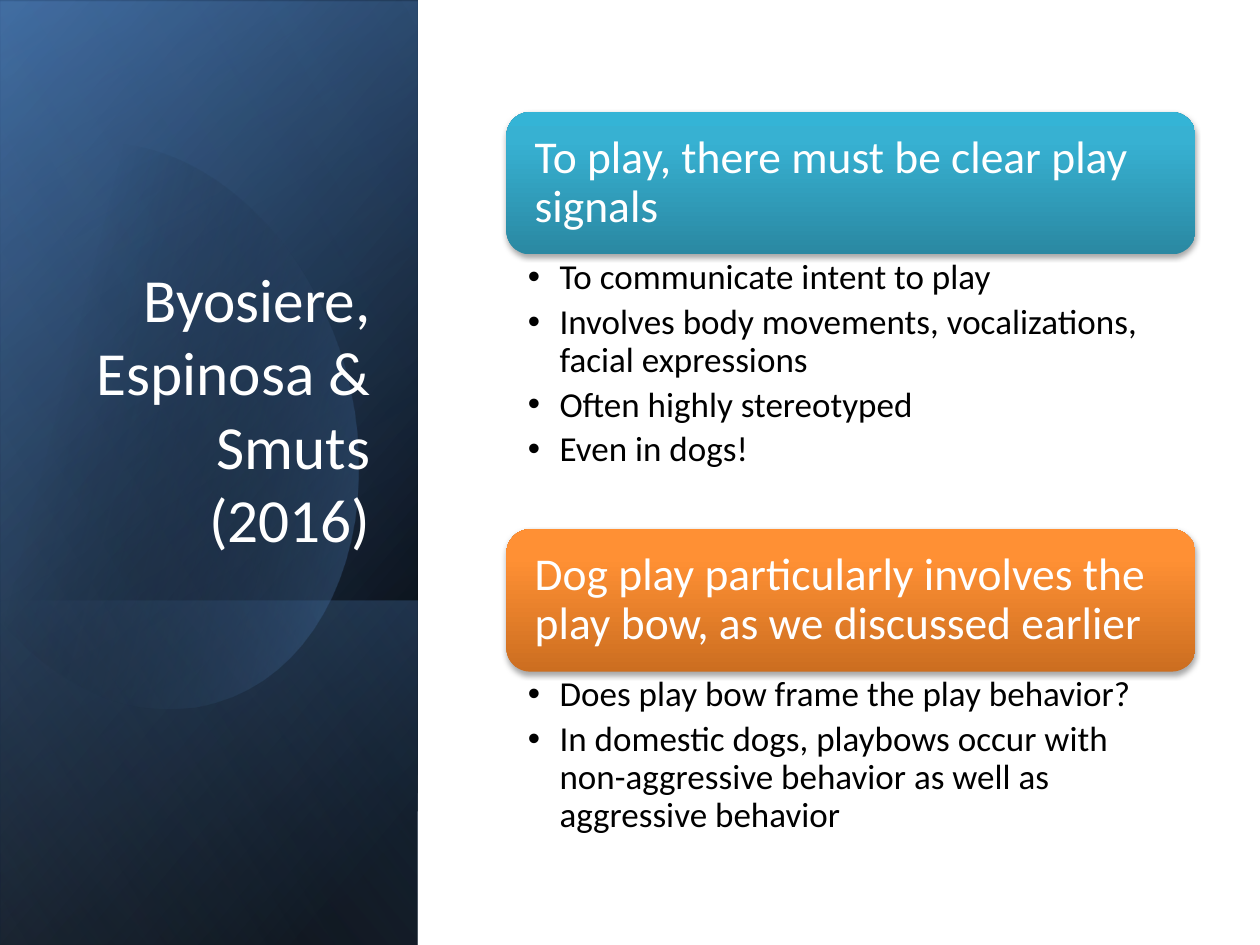
import pptx
import pptx.util
import pptx.dml.color
import pptx.enum.shapes
import pptx.enum.text
import pptx.oxml
import pptx.oxml.ns

Cm = pptx.util.Cm
Pt = pptx.util.Pt
RGBColor = pptx.dml.color.RGBColor
Anchor = pptx.enum.text.MSO_ANCHOR
Align = pptx.enum.text.PP_ALIGN
Preset = pptx.enum.shapes.MSO_SHAPE
qn = pptx.oxml.ns.qn

BLACK = RGBColor(0x00, 0x00, 0x00)
WHITE = RGBColor(0xFF, 0xFF, 0xFF)
NAVY = RGBColor(0x37, 0x60, 0x92)
BLUE = RGBColor(0x4F, 0x81, 0xBD)
PALE = RGBColor(0x95, 0xB3, 0xD7)
TEAL = [(0, RGBColor(0x2A, 0x88, 0xA2), 100),
        (80, RGBColor(0x37, 0xB1, 0xD2), 100),
        (100, RGBColor(0x34, 0xB4, 0xD6), 100)]
ORANGE = [(0, RGBColor(0xCC, 0x6E, 0x20), 100),
          (80, RGBColor(0xFF, 0x90, 0x34), 100),
          (100, RGBColor(0xFF, 0x91, 0x36), 100)]
FONT = "Calibri"

# Side panel layers in cm: left, top, width, stops (place, colour, opacity), angle
BASE = (-5.31, 5.31, 19.05, [(8, BLACK, 100), (100, NAVY, 100)], 50)
SHADE = (-5.31, 5.36, 19.05, [(0, BLACK, 0), (99, BLUE, 46)], 30)
FOOT = (0.74, 11.38, 6.96, [(2, BLUE, 29), (100, BLACK, 30)], 130)
GLOSS = (-5.31, 5.31, 19.05, [(0, BLACK, 0), (99, PALE, 11)], 120)
PANEL = 8.41

# Round glow in cm: one point ends a line, three end a curve
START = (2.44, 2.90)
GLOW = [
    [(4.34, 3.10), (6.20, 4.88), (6.93, 7.37)],
    [(7.80, 10.46), (6.65, 13.49), (4.34, 14.15)],
    [(2.90, 14.58), (1.35, 13.97), (0.18, 12.70)],
    [(-0.08, 12.40)], [(-0.64, 4.22)], [(-0.38, 3.91)],
    [(0.05, 3.48), (0.56, 3.18), (1.14, 3.00)],
    [(1.57, 2.87), (2.01, 2.84), START],
]

# Text column in cm
LEFT, WIDTH, BAR = 10.21, 13.89, 2.87
GROUPS = [
    (2.26, 5.54, TEAL, "To play, there must be clear play signals",
     ["To communicate intent to play",
      "Involves body movements, vocalizations, facial expressions",
      "Often highly stereotyped",
      "Even in dogs!"]),
    (10.67, 3.51, ORANGE,
     "Dog play particularly involves the play bow, as we discussed earlier",
     ["Does play bow frame the play behavior?",
      "In domestic dogs, playbows occur with non-aggressive behavior "
      "as well as aggressive behavior"]),
]


def blend(shape, stops, angle):
    """Fill a shape with a linear gradient and drop its line and shadow."""
    marks = "".join(
        f'<a:gs pos="{place * 1000}"><a:srgbClr val="{tint}">'
        f'<a:alpha val="{alpha * 1000}"/></a:srgbClr></a:gs>'
        for place, tint, alpha in stops)
    grad = pptx.oxml.parse_xml(
        f'<a:gradFill {pptx.oxml.ns.nsdecls("a")} rotWithShape="1">'
        f'<a:gsLst>{marks}</a:gsLst>'
        f'<a:lin ang="{angle * 60000}" scaled="0"/></a:gradFill>')
    shape.fill.solid()
    props = shape.element.spPr
    props.replace(props.find(qn("a:solidFill")), grad)
    shape.line.fill.background()
    shape.shadow.inherit = False


def add_layer(slide, left, top, width, stops, angle):
    """Add a mirrored panel turned on its side."""
    shape = slide.shapes.add_shape(
        Preset.RECTANGLE, Cm(left), Cm(top), Cm(width), Cm(PANEL))
    shape.rotation = 90
    shape.element.spPr.xfrm.set("flipH", "1")
    blend(shape, stops, angle)


def curve(ends, steps=20):
    """Give points along a cubic curve."""
    for step in range(1, steps + 1):
        t = step / steps
        parts = ((1 - t) ** 3, 3 * t * (1 - t) ** 2, 3 * t * t * (1 - t), t ** 3)
        yield tuple(sum(w * p[axis] for w, p in zip(parts, ends))
                    for axis in (0, 1))


def add_glow(slide):
    points, last = [], START
    for piece in GLOW:
        points += piece if len(piece) == 1 else curve([last] + piece)
        last = piece[-1]
    pen = slide.shapes.build_freeform(Cm(START[0]), Cm(START[1]))
    pen.add_line_segments([(Cm(x), Cm(y)) for x, y in points], close=True)
    blend(pen.convert_to_shape(), [(29, BLACK, 0), (100, BLUE, 43)], 14)


def place(shape, left, top, width, height):
    shape.left, shape.top = Cm(left), Cm(top)
    shape.width, shape.height = Cm(width), Cm(height)


def set_frame(frame, anchor, left, top, right, base):
    frame.word_wrap = True
    frame.auto_size = pptx.enum.text.MSO_AUTO_SIZE.NONE
    frame.vertical_anchor = anchor
    frame.margin_left, frame.margin_top = Cm(left), Cm(top)
    frame.margin_right, frame.margin_bottom = Cm(right), Cm(base)


def style(para, size, tint, align=Align.LEFT):
    para.alignment = align
    para.font.name, para.font.size = FONT, Pt(size)
    para.font.color.rgb = tint


def set_title(title):
    title.element.getparent().append(title.element)  # above the panel
    place(title, 1.22, 4.67, 6.5, 6.65)
    set_frame(title.text_frame, Anchor.BOTTOM, 0.25, 0.13, 0.25, 0.13)
    title.text_frame.text = "Byosiere, Espinosa & Smuts (2016)"
    style(title.text_frame.paragraphs[0], 35, WHITE, Align.RIGHT)


def add_bar(slide, top, stops, text):
    bar = slide.shapes.add_shape(
        Preset.ROUNDED_RECTANGLE, Cm(LEFT), Cm(top), Cm(WIDTH), Cm(BAR))
    blend(bar, stops, 270)
    bar.element.spPr.find(qn("a:effectLst")).append(pptx.oxml.parse_xml(
        f'<a:outerShdw {pptx.oxml.ns.nsdecls("a")} blurRad="{Pt(3.1)}" '
        f'dist="{Pt(1.8)}" dir="5400000" rotWithShape="0">'
        f'<a:srgbClr val="{BLACK}"><a:alpha val="35000"/></a:srgbClr>'
        '</a:outerShdw>'))
    set_frame(bar.text_frame, Anchor.MIDDLE, 0.43, 0.43, 0.43, 0.43)
    bar.text_frame.text = text
    para = bar.text_frame.paragraphs[0]
    para.line_spacing = 0.9
    style(para, 26, WHITE)


def set_list(body, top, height, items):
    place(body, LEFT, top, WIDTH, height)
    set_frame(body.text_frame, Anchor.TOP, 0.43, 0.1, 0.51, 0.1)
    body.text_frame.text = "\n".join(items)
    for para in body.text_frame.paragraphs:
        style(para, 20, BLACK)
        para.line_spacing = 0.9
        para.space_before, para.space_after = Pt(0), Pt(4)
        # Hanging indent for the bullet
        props = para._p.get_or_add_pPr()
        props.set("marL", str(Cm(0.64)))
        props.set("indent", str(-Cm(0.64)))


def main():
    deck = pptx.Presentation()
    deck.slide_width, deck.slide_height = Cm(25.4), Cm(19.05)
    slide = deck.slides.add_slide(deck.slide_layouts[3])  # title and two lists

    # Side panel
    for layer in (BASE, SHADE, FOOT):
        add_layer(slide, *layer)
    add_glow(slide)
    add_layer(slide, *GLOSS)
    set_title(slide.shapes.title)

    # Headed lists
    for index, (top, height, stops, head, items) in enumerate(GROUPS, 1):
        add_bar(slide, top, stops, head)
        set_list(slide.placeholders[index], top + BAR, height, items)

    deck.save("out.pptx")


if __name__ == "__main__":
    main()
